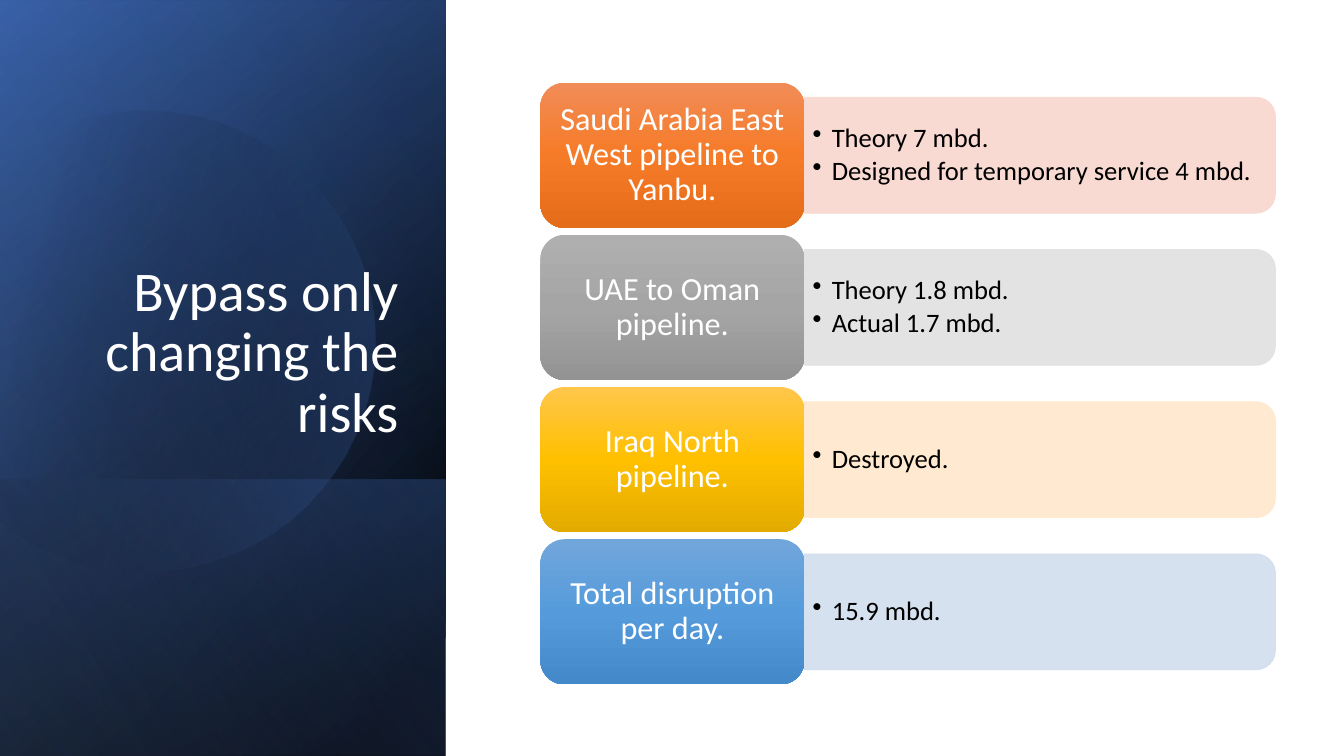
from dataclasses import dataclass
from math import cos, radians, sin

from lxml.etree import SubElement
from pptx import Presentation
from pptx.dml.color import RGBColor
from pptx.enum.shapes import MSO_SHAPE
from pptx.enum.text import MSO_ANCHOR, MSO_AUTO_SIZE, PP_ALIGN
from pptx.oxml.ns import qn
from pptx.util import Inches, Pt

FONT = "Calibri"
WHITE, BLACK = "FFFFFF", "000000"
CARD_LEFT, CARD_TOP, CARD_WIDTH, CARD_HEIGHT = 5.36, 0.82, 2.62, 1.44
ROW_PITCH = 1.51
BAR_LENGTH, BAR_HEIGHT = 4.67, 1.15
LIST_WIDTH, LIST_HEIGHT = 4.61, 1.04
CIRCLE_CENTER = (1.585, 3.345)
CIRCLE_ROTATION = 343.9

Point = tuple[float, float]


@dataclass
class Stop:
    position: int
    color: str
    opacity: int = 100


@dataclass
class Panel:
    left: float
    top: float
    width: float
    height: float
    angle: int
    stops: list[Stop]


@dataclass
class Route:
    name: str
    facts: list[str]
    card_colors: list[str]
    bar_color: str


BASE_PANELS = [
    Panel(-1.54, 1.54, 7.5, 4.42, 50, [Stop(8, BLACK), Stop(100, "2F5597")]),
    Panel(-1.54, 1.55, 7.5, 4.42, 30, [Stop(0, BLACK, 0), Stop(99, "4472C4", 46)]),
    Panel(0.84, 3.92, 2.74, 4.42, 130, [Stop(2, "4472C4", 29), Stop(100, BLACK, 30)]),
]
TOP_PANEL = Panel(-1.54, 1.54, 7.5, 4.42, 120, [Stop(0, BLACK, 0), Stop(99, "8FAADC", 11)])

CIRCLE_START = (1.49, 1.1)
CIRCLE_RIGHT_CURVES = [
    ((2.46, 1.12), (3.35, 1.77), (3.63, 2.75)),
    ((3.98, 3.97), (3.28, 5.23), (2.07, 5.58)),
    ((1.31, 5.8), (0.53, 5.61), (-0.03, 5.14)),
]
CIRCLE_LEFT_EDGE = [(-0.15, 5.03), (-0.15, 1.75), (0, 1.61)]
CIRCLE_TOP_CURVES = [
    ((0.23, 1.42), (0.5, 1.28), (0.8, 1.19)),
    ((1.03, 1.13), (1.26, 1.1), CIRCLE_START),
]

ROUTES = [
    Route("Saudi Arabia East West pipeline to Yanbu.",
          ["Theory 7 mbd.", "Designed for temporary service 4 mbd."],
          ["F18C57", "F67B28", "E56C19"], "F8D7CE"),
    Route("UAE to Oman pipeline.", ["Theory 1.8 mbd.", "Actual 1.7 mbd."],
          ["AFAFAF", "A5A5A5", "939393"], "E1E1E1"),
    Route("Iraq North pipeline.", ["Destroyed."],
          ["FFC64B", "FFC000", "E3AB00"], "FFE8CC"),
    Route("Total disruption per day.", ["15.9 mbd."],
          ["71A6DB", "559BDB", "448ACA"], "D2DEEF"),
]


def set_opacity(color_element, percent: int) -> None:
    SubElement(color_element, qn("a:alpha"), val=str(percent * 1000))


def fill_gradient(shape, stops: list[Stop], angle: int) -> None:
    """Give the shape a linear gradient that turns with it, and no outline."""
    shape.shadow.inherit = False
    shape.line.fill.background()
    shape.fill.gradient()
    gradient = shape.element.spPr.find(qn("a:gradFill"))
    for child in list(gradient):
        gradient.remove(child)
    gradient.set("rotWithShape", "1")
    stop_list = SubElement(gradient, qn("a:gsLst"))
    for stop in stops:
        entry = SubElement(stop_list, qn("a:gs"), pos=str(stop.position * 1000))
        color = SubElement(entry, qn("a:srgbClr"), val=stop.color)
        if stop.opacity < 100:
            set_opacity(color, stop.opacity)
    SubElement(gradient, qn("a:lin"), ang=str(angle * 60000), scaled="0")


def add_box(slide, kind, left: float, top: float, width: float, height: float):
    return slide.shapes.add_shape(kind, Inches(left), Inches(top), Inches(width), Inches(height))


def add_panel(slide, panel: Panel) -> None:
    box = add_box(slide, MSO_SHAPE.RECTANGLE, panel.left, panel.top, panel.width, panel.height)
    box.rotation = 90
    box.element.spPr.find(qn("a:xfrm")).set("flipH", "1")
    fill_gradient(box, panel.stops, panel.angle)


def curve_points(start: Point, curves: list[tuple[Point, Point, Point]]) -> list[Point]:
    """Sample a chain of cubic curves, leaving out its start."""
    points = []
    steps = 16
    for first, second, end in curves:
        for step in range(1, steps + 1):
            t = step / steps
            weights = ((1 - t) ** 3, 3 * t * (1 - t) ** 2, 3 * t * t * (1 - t), t ** 3)
            controls = (start, first, second, end)
            points.append(tuple(sum(weight * control[axis] for weight, control in zip(weights, controls))
                                for axis in (0, 1)))
        start = end
    return points


def turn_back(point: Point) -> Point:
    """Undo the circle's rotation, in EMU."""
    angle = radians(-CIRCLE_ROTATION)
    x, y = point[0] - CIRCLE_CENTER[0], point[1] - CIRCLE_CENTER[1]
    return (Inches(CIRCLE_CENTER[0] + x * cos(angle) - y * sin(angle)),
            Inches(CIRCLE_CENTER[1] + x * sin(angle) + y * cos(angle)))


def add_circle(slide) -> None:
    outline = [CIRCLE_START, *curve_points(CIRCLE_START, CIRCLE_RIGHT_CURVES), *CIRCLE_LEFT_EDGE,
               *curve_points(CIRCLE_LEFT_EDGE[-1], CIRCLE_TOP_CURVES)]
    start, *rest = [turn_back(point) for point in outline]
    builder = slide.shapes.build_freeform(*start)
    builder.add_line_segments(rest, close=True)
    circle = builder.convert_to_shape()
    circle.rotation = CIRCLE_ROTATION
    fill_gradient(circle, [Stop(29, BLACK, 0), Stop(100, "4472C4", 43)], 30)


def set_frame(frame, anchor, side: float, edge: float) -> None:
    frame.word_wrap = True
    frame.auto_size = MSO_AUTO_SIZE.NONE
    frame.vertical_anchor = anchor
    frame.margin_left = frame.margin_right = Inches(side)
    frame.margin_top = frame.margin_bottom = Inches(edge)


def write(para, text: str, size: int, color: str, alignment) -> None:
    para.alignment = alignment
    para.line_spacing = 0.9
    span = para.add_run()
    span.text = text
    span.font.name = FONT
    span.font.size = Pt(size)
    span.font.color.rgb = RGBColor.from_string(color)


def add_title(slide, text: str) -> None:
    title = slide.shapes.title
    title.left, title.top, title.width, title.height = map(Inches, (0.64, 1.84, 3.41, 2.62))
    set_frame(title.text_frame, MSO_ANCHOR.BOTTOM, 0.1, 0.05)
    write(title.text_frame.paragraphs[0], text, 40, WHITE, PP_ALIGN.RIGHT)
    title.element.getparent().append(title.element)  # in front of the panels


def add_bar(slide, middle: float, color: str) -> None:
    center = CARD_LEFT + CARD_WIDTH + BAR_LENGTH / 2
    bar = add_box(slide, MSO_SHAPE.ROUND_2_SAME_RECTANGLE, center - BAR_HEIGHT / 2,
                  middle - BAR_LENGTH / 2, BAR_HEIGHT, BAR_LENGTH)
    bar.rotation = 90
    bar.shadow.inherit = False
    bar.line.width = Pt(0.5)
    for fill in (bar.fill, bar.line.fill):
        fill.solid()
        fill.fore_color.rgb = RGBColor.from_string(color)
    for color_element in bar.element.spPr.iter(qn("a:srgbClr")):
        set_opacity(color_element, 90)


def add_facts(slide, middle: float, facts: list[str]) -> None:
    box = slide.shapes.add_textbox(Inches(CARD_LEFT + CARD_WIDTH), Inches(middle - LIST_HEIGHT / 2),
                                   Inches(LIST_WIDTH), Inches(LIST_HEIGHT))
    frame = box.text_frame
    set_frame(frame, MSO_ANCHOR.MIDDLE, 0.08, 0.04)
    for index, fact in enumerate(facts):
        para = frame.add_paragraph() if index else frame.paragraphs[0]
        para.level = 1
        properties = para._p.get_or_add_pPr()
        properties.set("marL", str(Inches(0.19)))
        properties.set("indent", str(-Inches(0.19)))
        SubElement(properties, qn("a:buChar"), char="•")
        para.space_after = Pt(2.85)
        write(para, fact, 19, BLACK, PP_ALIGN.LEFT)


def add_route(slide, route: Route, top: float) -> None:
    middle = top + CARD_HEIGHT / 2
    add_bar(slide, middle, route.bar_color)
    add_facts(slide, middle, route.facts)
    card = add_box(slide, MSO_SHAPE.ROUNDED_RECTANGLE, CARD_LEFT, top, CARD_WIDTH, CARD_HEIGHT)
    fill_gradient(card, [Stop(50 * index, color) for index, color in enumerate(route.card_colors)], 90)
    set_frame(card.text_frame, MSO_ANCHOR.MIDDLE, 0.1, 0.05)
    write(card.text_frame.paragraphs[0], route.name, 23, WHITE, PP_ALIGN.CENTER)


def main() -> None:
    deck = Presentation()
    deck.slide_width, deck.slide_height = Inches(13.33), Inches(7.5)
    page = deck.slides.add_slide(deck.slide_layouts.get_by_name("Title Only"))
    for panel in BASE_PANELS:
        add_panel(page, panel)
    add_circle(page)
    add_panel(page, TOP_PANEL)
    add_title(page, "Bypass only changing the risks")
    for row, route in enumerate(ROUTES):
        add_route(page, route, CARD_TOP + row * ROW_PITCH)
    deck.save("out.pptx")


if __name__ == "__main__":
    main()
